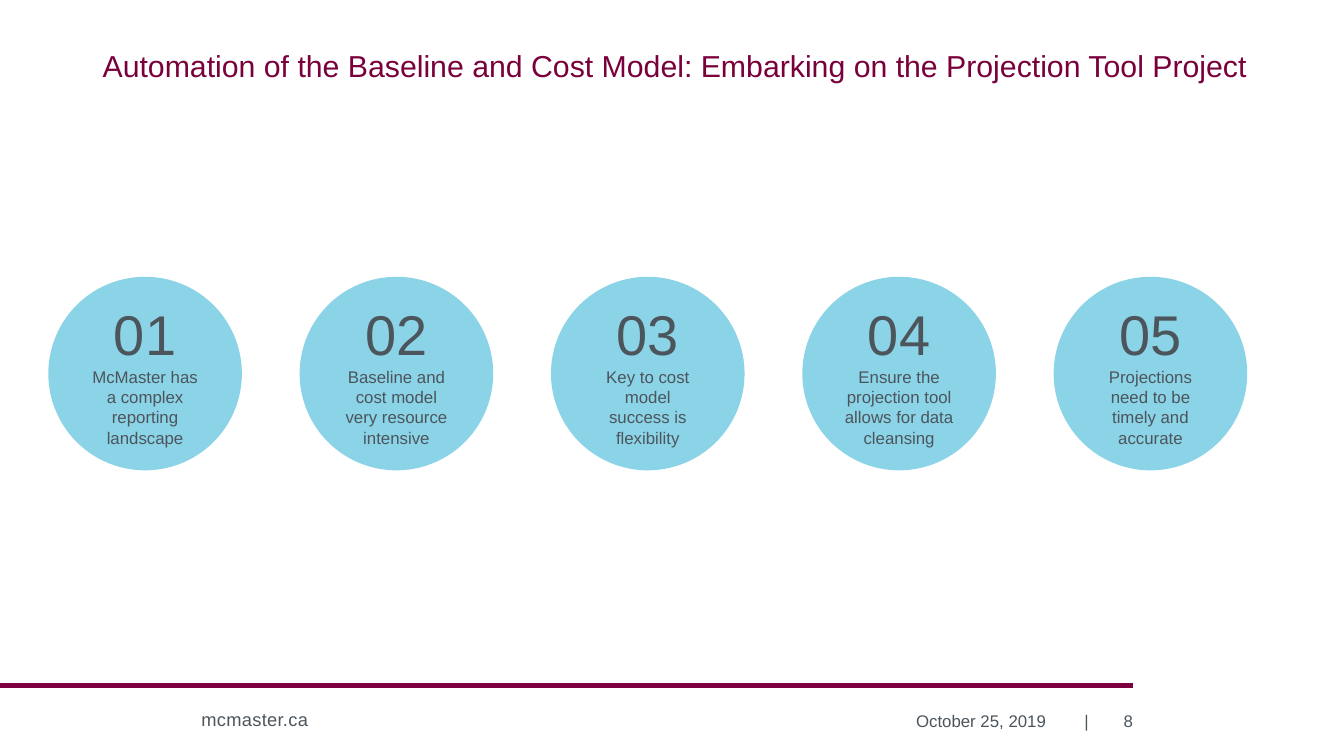
from lxml import etree
from pptx import Presentation
from pptx.dml.color import RGBColor
from pptx.enum import shapes, text
from pptx.oxml.ns import qn
from pptx.util import Inches, Pt

# Content
TITLE = "Automation of the Baseline and Cost Model: Embarking on the Projection Tool Project"
STEPS = [
    "McMaster has a complex reporting landscape",
    "Baseline and cost model very resource intensive",
    "Key to cost model success is flexibility",
    "Ensure the projection tool allows for data cleansing",
    "Projections need to be timely and accurate",
]
LEFT, CENTER, RIGHT = text.PP_ALIGN.LEFT, text.PP_ALIGN.CENTER, text.PP_ALIGN.RIGHT
TOP, MIDDLE = text.MSO_ANCHOR.TOP, text.MSO_ANCHOR.MIDDLE
# wording, position and size, margins, alignment, anchor, size, letter spacing
FOOTER = [
    ("mcmaster.ca", (1.4, 5.22, 2.74, 0.27), (0.1, 0.05, 0.1, 0.05), LEFT, TOP, 9.8, 0.15),
    ("October 25, 2019", (5.74, 5.21, 2.14, 0.3), (0.1, 0.05, 0.1, 0.05), RIGHT, MIDDLE, 9, 0),
    ("|", (7.92, 5.21, 0.25, 0.3), (0.07, 0.04, 0.07, 0.04), RIGHT, MIDDLE, 9, 0),
    ("8", (7.91, 5.21, 0.52, 0.3), (0.1, 0.05, 0, 0.05), RIGHT, MIDDLE, 9, 0),
]
COLORS = {"title": "79003B", "rule": "7C0040", "circle": "8BD3E6", "text": "4C555C"}

# Circle row
FIRST_LEFT, ROW_TOP, DIAMETER, STEP = 0.36, 2.06, 1.44, 1.87


def color(name):
    return RGBColor.from_string(COLORS[name])


def place(shape, left, top, width, height):
    shape.left, shape.top = Inches(left), Inches(top)
    shape.width, shape.height = Inches(width), Inches(height)


def set_frame(frame, margins, anchor):
    frame.word_wrap = True
    frame.vertical_anchor = anchor
    (frame.margin_left, frame.margin_top,
     frame.margin_right, frame.margin_bottom) = map(Inches, margins)


def write(para, wording, size, align, name="text"):
    para.text = wording
    para.alignment = align
    para.font.name = "Arial"
    para.font.size = Pt(size)
    para.font.color.rgb = color(name)


# Widescreen 16:9 page
deck = Presentation()
deck.slide_width = Inches(10)
deck.slide_height = deck.slide_width * 9 // 16
slide = deck.slides.add_slide(deck.slide_layouts[5])

# Footer rule
rule = slide.shapes.add_connector(
    shapes.MSO_CONNECTOR.STRAIGHT, Inches(0), Inches(5.1), Inches(8.43), Inches(5.1))
rule.line.color.rgb = color("rule")
rule.line.width = Pt(3)
etree.SubElement(rule._element.spPr, qn("a:effectLst"))

# Title
title = slide.shapes.title
place(title, 0.22, 0.08, 9.6, 0.54)
set_frame(title.text_frame, (0.1, 0.05, 0.1, 0), text.MSO_ANCHOR.BOTTOM)
title.text_frame.auto_size = text.MSO_AUTO_SIZE.NONE
heading = title.text_frame.paragraphs[0]
write(heading, TITLE, 16.2, CENTER, "title")
heading.line_spacing = 1.5

# Numbered circles
for index, wording in enumerate(STEPS):
    circle = slide.shapes.add_shape(
        shapes.MSO_SHAPE.OVAL, Inches(FIRST_LEFT + index * STEP), Inches(ROW_TOP),
        Inches(DIAMETER), Inches(DIAMETER))
    circle.shadow.inherit = False
    circle.fill.solid()
    circle.fill.fore_color.rgb = color("circle")
    circle.line.fill.background()
    frame = circle.text_frame
    set_frame(frame, (0.1, 0.05, 0.1, 0.05), MIDDLE)
    write(frame.paragraphs[0], f"{index + 1:02}", 30, CENTER)
    write(frame.add_paragraph(), wording, 9, CENTER)

# Footer
for wording, spot, margins, align, anchor, size, spacing in FOOTER:
    box = slide.shapes.add_textbox(*map(Inches, spot))
    set_frame(box.text_frame, margins, anchor)
    para = box.text_frame.paragraphs[0]
    write(para, wording, size, align)
    if spacing:
        para.runs[0]._r.get_or_add_rPr().set("spc", str(round(spacing * 100)))

deck.save("out.pptx")
